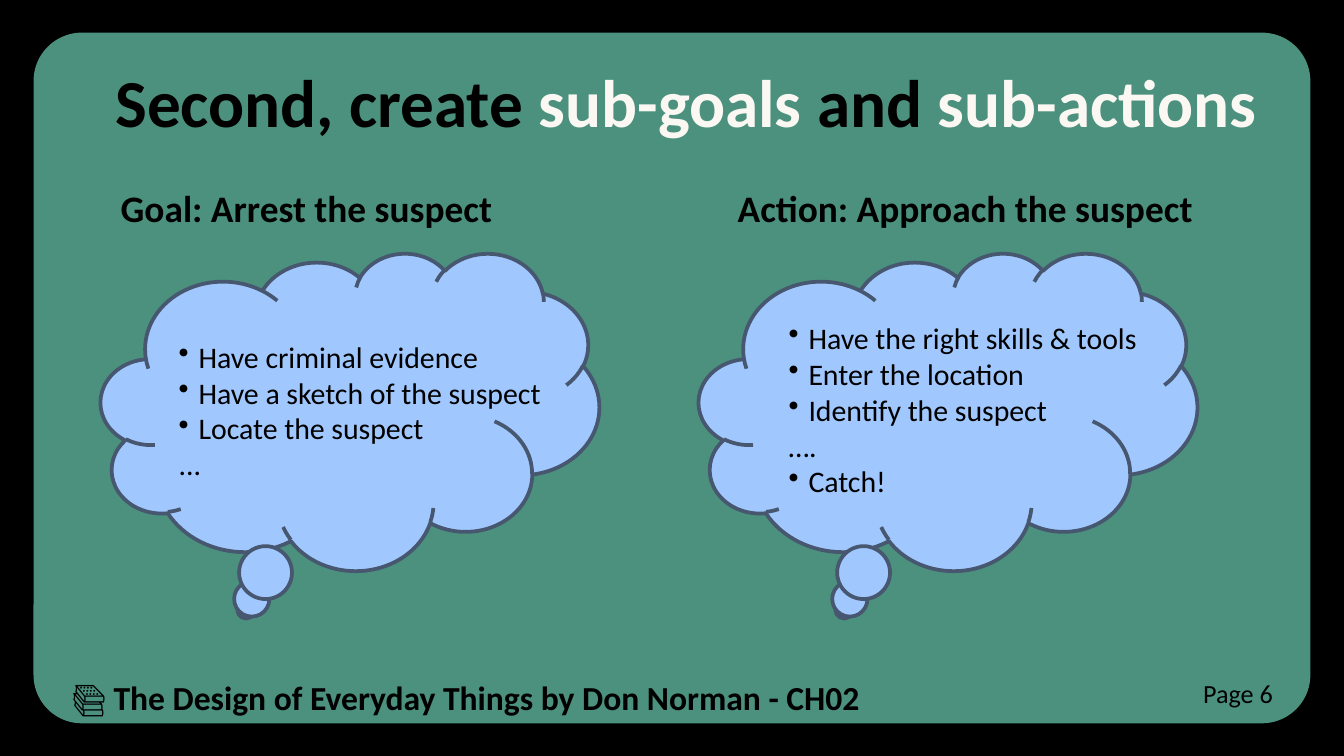
"""Build a slide that splits a goal and an action into smaller steps."""
from lxml import etree
from pptx import Presentation
from pptx import util as u
from pptx.dml import color
from pptx.enum import shapes, text
from pptx.oxml import ns

BLACK, GREEN, CREAM = "000000", "4B917D", "FBF8F4"
SKY, SLATE = "A0C7FE", "46576F"


def rgb(value):
    return color.RGBColor.from_string(value)


def add_span(para, words, size=16, bold=False, ink=BLACK):
    span = para.add_run()
    span.text = words
    span.font.name = "Calibri"
    span.font.size = u.Pt(size)
    span.font.bold = bold
    span.font.color.rgb = rgb(ink)


def add_bullet(para, indent=10.7):
    props = para._p.get_or_add_pPr()
    props.set("marL", str(u.Pt(indent)))
    props.set("indent", str(-u.Pt(indent)))
    etree.SubElement(props, ns.qn("a:buChar")).set("char", "•")


class Board:
    def __init__(self, deck):
        self.page = deck.slides.add_slide(deck.slide_layouts[6])
        fill = self.page.background.fill
        fill.solid()
        fill.fore_color.rgb = rgb(BLACK)

    def shape(self, kind, place, fill, line=None):
        shape = self.page.shapes.add_shape(kind, *map(u.Pt, place))
        shape.shadow.inherit = False
        shape.fill.solid()
        shape.fill.fore_color.rgb = rgb(fill)
        if line:
            shape.line.color.rgb = rgb(line)
            shape.line.width = u.Pt(2)
        else:
            shape.line.fill.background()
        return shape

    def frame(self, place, inset=7.2):
        frame = self.page.shapes.add_textbox(*map(u.Pt, place)).text_frame
        frame.word_wrap = True
        frame.margin_left = frame.margin_right = u.Pt(7.2)
        frame.margin_top = frame.margin_bottom = u.Pt(inset)
        return frame

    def label(self, place, spans, align=text.PP_ALIGN.LEFT, **style):
        para = self.frame(place).paragraphs[0]
        para.alignment = align
        for words, ink in spans:
            add_span(para, words, ink=ink, **style)

    def steps(self, place, lines):
        frame = self.frame(place, inset=3.6)
        for index, words in enumerate(lines):
            para = frame.add_paragraph() if index else frame.paragraphs[0]
            if words.strip(".…"):
                add_bullet(para)
            add_span(para, words)

    def thought(self, left, heading, heading_place, lines, lines_place):
        self.shape(shapes.MSO_SHAPE.CLOUD_CALLOUT, (left, 135.4, 267, 170), SKY, SLATE)
        self.label(heading_place, [(heading, BLACK)], size=20, bold=True)
        self.steps(lines_place, lines)


def main():
    deck = Presentation()
    deck.slide_width, deck.slide_height = u.Pt(720), u.Pt(405)
    board = Board(deck)

    panel = board.shape(shapes.MSO_SHAPE.ROUNDED_RECTANGLE, (18, 17.5, 684, 370), GREEN)
    panel.adjustments[0] = 0.07

    title = [("Second, create ", BLACK), ("sub-goals ", CREAM),
             ("and ", BLACK), ("sub-actions", CREAM)]
    board.label((54.7, 25.2, 639.4, 54), title, size=36, bold=True)

    board.thought(
        54, "Goal: Arrest the suspect", (57.6, 92.2, 304, 48),
        ["Have criminal evidence", "Have a sketch of the suspect",
         "Locate the suspect", "..."],
        (88.6, 177.8, 217.4, 104.4))
    board.thought(
        374.4, "Action: Approach the suspect", (388.1, 92.2, 266.4, 59),
        ["Have the right skills & tools", "Enter the location",
         "Identify the suspect", "….", "Catch!"],
        (415.4, 167.8, 232.6, 123.8))

    board.label((31.7, 355.7, 494, 54),
                [("📚 The Design of Everyday Things by Don Norman - CH02", BLACK)],
                size=18, bold=True)
    board.label((493.2, 355.7, 195.8, 28), [("Page 6", BLACK)],
                align=text.PP_ALIGN.RIGHT, size=14)
    deck.save("out.pptx")


if __name__ == "__main__":
    main()
